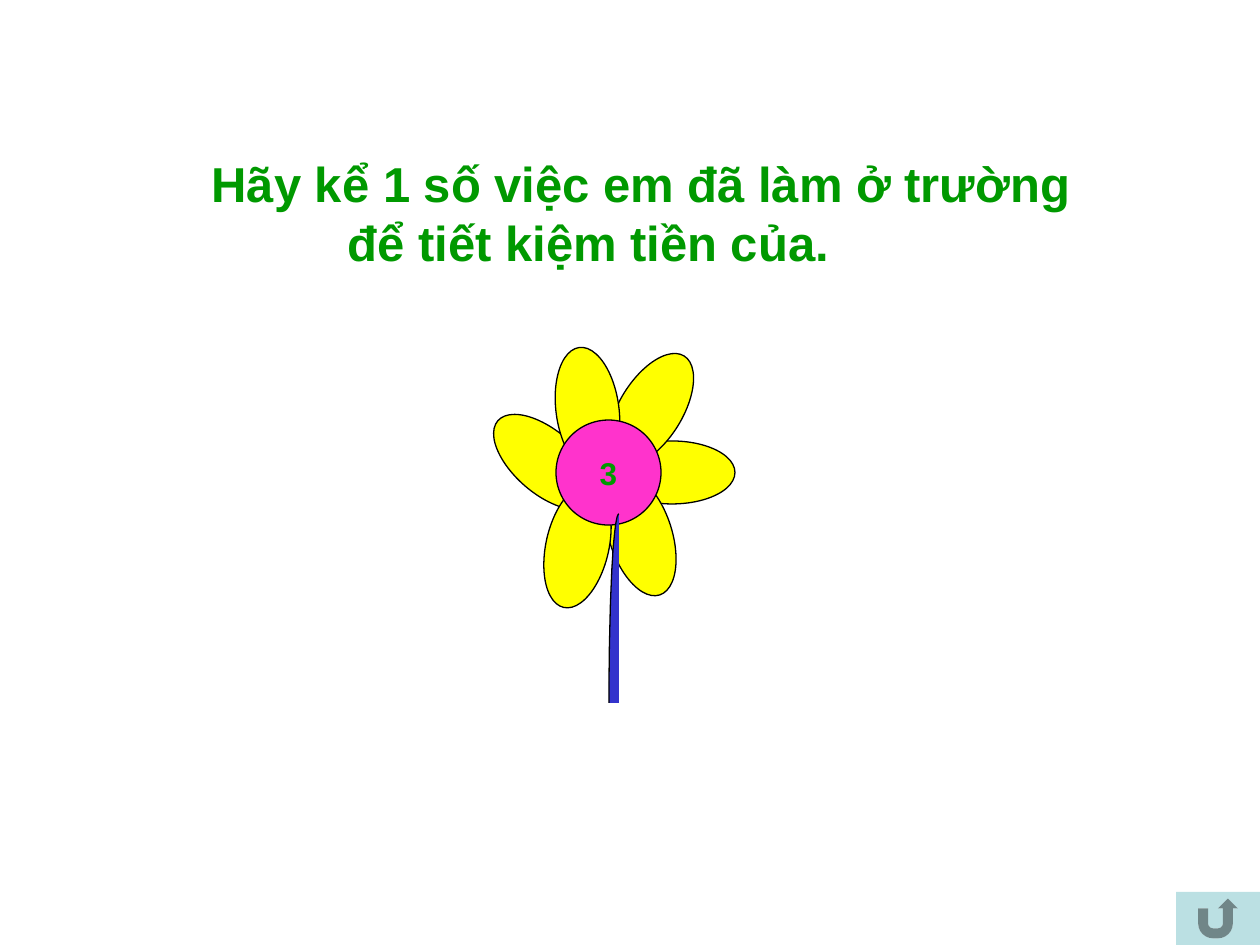
from math import cos, pi, sin
from typing import NamedTuple

from pptx import Presentation
from pptx.dml.color import RGBColor
from pptx.enum.shapes import MSO_SHAPE as Kind
from pptx.enum.text import MSO_ANCHOR as Anchor, MSO_AUTO_SIZE as Fit, PP_ALIGN as Align
from pptx.util import Emu, Pt

SCALE = 914400 / 126
FINE = 10  # steps per px along the stem's curve
INK = {"text": "009900", "petal": "FFFF00", "heart": "FF33CC",
       "stem": "3333CC", "button": "BBE0E3", "line": "000000"}


class Box(NamedTuple):
    left: int
    top: int
    wide: int
    high: int
    turn: float = 0


BACK = [Box(514, 399, 63, 126, 310.9)]
PETALS = BACK + [
    Box(609, 441, 126, 63),
    Box(588, 378, 126, 63, 301.8),
    Box(609, 472, 63, 126, 342.3),
    Box(556, 347, 63, 126, 352.4),
    Box(546, 483, 63, 126, 12.6),
]
HEART = Box(556, 420, 105, 105)
STEM = Box(609, 514, 10, 189)
BUTTON = Box(1176, 892, 84, 53)
ASK = Box(199, 147, 903, 131)


def px(n: float) -> Emu:
    return Emu(round(n * SCALE))


def rgb(name: str) -> RGBColor:
    return RGBColor.from_string(INK[name])


def paint(shape, fill: str = "", line: str = "") -> None:
    """Set fill and line; an empty name means none."""
    shape.shadow.inherit = False
    if fill:
        shape.fill.solid()
        shape.fill.fore_color.rgb = rgb(fill)
    else:
        shape.fill.background()
    if line:
        shape.line.color.rgb = rgb(line)
        shape.line.width = Pt(0.75)
    else:
        shape.line.fill.background()


def draw(slide, kind: Kind, box: Box, fill: str, line: str = ""):
    shape = slide.shapes.add_shape(kind, *map(px, box[:4]))
    shape.rotation = box.turn
    paint(shape, fill, line)
    return shape


def write(para, text: str, size: int) -> None:
    run = para.add_run()
    run.text = text
    run.font.name = "Arial"
    run.font.size = Pt(size)
    run.font.bold = True
    run.font.color.rgb = rgb("text")


def add_ask(slide) -> None:
    """Place the question in the title, its second line set in by a hanging indent."""
    title = slide.shapes.title
    title.left, title.top, title.width, title.height = map(px, ASK[:4])
    frame = title.text_frame
    frame.word_wrap = True
    frame.auto_size = Fit.NONE
    frame.vertical_anchor = Anchor.TOP
    para = frame.paragraphs[0]
    para.alignment = Align.LEFT
    props = para._p.get_or_add_pPr()
    props.set("marL", str(px(136)))
    props.set("indent", str(-px(136)))
    write(para, "Hãy kể 1 số việc em đã làm ở trường để tiết kiệm tiền của.", 28)


def add_heart(slide) -> None:
    heart = draw(slide, Kind.OVAL, HEART, "heart", "line")
    frame = heart.text_frame
    frame.word_wrap = False
    frame.vertical_anchor = Anchor.MIDDLE
    para = frame.paragraphs[0]
    para.alignment = Align.CENTER
    write(para, "3", 18)


def add_stem(slide) -> None:
    """Fill a quarter ellipse, then line only its curved edge."""
    right, foot = STEM.left + STEM.wide, STEM.top + STEM.high
    steps = 32
    angles = [pi / 2 * (1 - i / steps) for i in range(steps + 1)]
    curve = [(round(FINE * (right - STEM.wide * cos(a))),
              round(FINE * (foot - STEM.high * sin(a)))) for a in angles]
    corner = (FINE * right, FINE * foot)
    for points, fill, line in ((curve + [corner], "stem", ""), (curve, "", "line")):
        pen = slide.shapes.build_freeform(*points[0], scale=SCALE / FINE)
        pen.add_line_segments(points[1:], close=bool(fill))
        paint(pen.convert_to_shape(), fill, line)


def main() -> None:
    deck = Presentation()
    deck.slide_width, deck.slide_height = px(1260), px(945)
    slide = deck.slides.add_slide(deck.slide_layouts[5])
    add_ask(slide)
    for petal in PETALS:
        draw(slide, Kind.OVAL, petal, "petal", "line")
    add_heart(slide)
    add_stem(slide)
    draw(slide, Kind.ACTION_BUTTON_RETURN, BUTTON, "button")
    deck.save("out.pptx")


if __name__ == "__main__":
    main()
